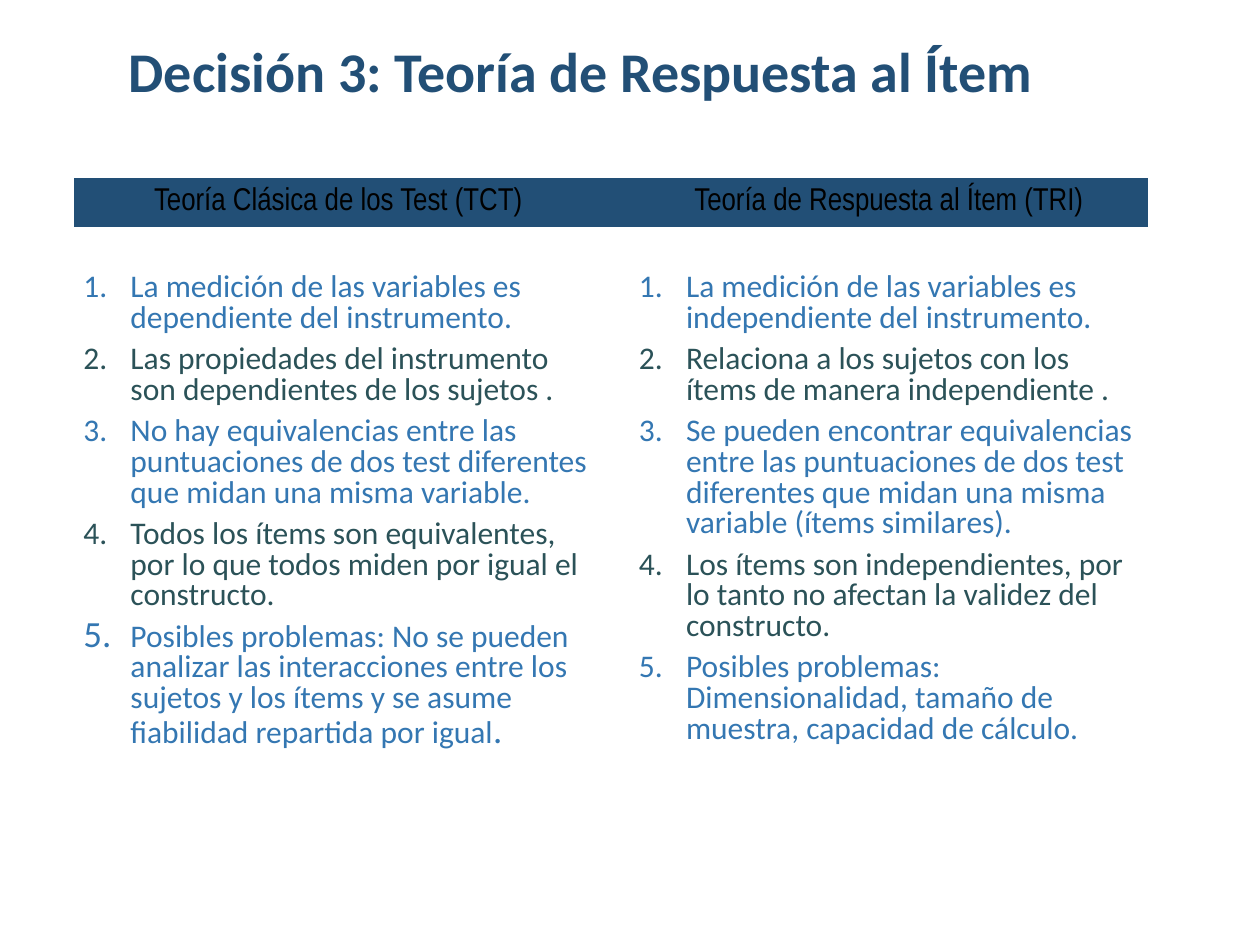
import pptx
import pptx.util
import pptx.dml.color
import pptx.enum.text
import pptx.oxml.ns
import lxml.etree

Cm = pptx.util.Cm
Pt = pptx.util.Pt
qn = pptx.oxml.ns.qn
PP_ALIGN = pptx.enum.text.PP_ALIGN
MSO_ANCHOR = pptx.enum.text.MSO_ANCHOR

COLORS = {"navy": "224F76", "blue": "3477B2", "teal": "2B5258", "black": "000000"}
NO_STYLE = "{2D5ABB26-0587-4C30-8999-92F81FD0307C}"

HEADERS = {0: "Teoría Clásica de los Test (TCT)", 2: "Teoría de Respuesta al Ítem (TRI)"}
ITEMS = {
    0: [
        "La medición de las variables es dependiente del instrumento.",
        "Las propiedades del instrumento son dependientes de los sujetos .",
        "No hay equivalencias entre las puntuaciones de dos test diferentes que midan una misma variable.",
        "Todos los ítems son equivalentes, por lo que todos miden por igual el constructo.",
        "Posibles problemas: No se pueden analizar las interacciones entre los sujetos y los ítems "
        "y se asume fiabilidad repartida por igual",
    ],
    2: [
        "La medición de las variables es independiente del instrumento.",
        "Relaciona a los sujetos con los ítems de manera independiente .",
        "Se pueden encontrar equivalencias entre las puntuaciones de dos test diferentes "
        "que midan una misma variable (ítems similares).",
        "Los ítems son independientes, por lo tanto no afectan la validez del constructo.",
        "Posibles problemas: Dimensionalidad, tamaño de muestra, capacidad de cálculo.",
    ],
}


def add_run(p, text, size, font, color, bold=False):
    r = p.add_run()
    r.text = text
    r.font.size = Pt(size)
    r.font.name = font
    r.font.bold = bold
    r.font.color.rgb = pptx.dml.color.RGBColor.from_string(COLORS[color])


def add_number(p, color, percent):
    pPr = p._p.get_or_add_pPr()
    pPr.set("marL", str(Cm(0.95)))
    pPr.set("indent", str(-Cm(0.95)))
    clr = lxml.etree.SubElement(pPr, qn("a:buClr"))
    lxml.etree.SubElement(clr, qn("a:srgbClr"), val=COLORS[color])
    lxml.etree.SubElement(pPr, qn("a:buSzPct"), val=str(percent * 1000))
    lxml.etree.SubElement(pPr, qn("a:buFont"), typeface="Calibri")
    lxml.etree.SubElement(pPr, qn("a:buAutoNum"), type="arabicPeriod")


prs = pptx.Presentation()
prs.slide_width = Cm(25.4)
prs.slide_height = Cm(19.05)
s = prs.slides.add_slide(prs.slide_layouts[5])

title = s.shapes.title
title.left, title.top, title.width, title.height = Cm(2.34), Cm(0.61), Cm(22.3), Cm(1.63)
tf = title.text_frame
tf.word_wrap = True
tf.auto_size = pptx.enum.text.MSO_AUTO_SIZE.NONE
tf.vertical_anchor = MSO_ANCHOR.TOP
p = tf.paragraphs[0]
p.alignment = PP_ALIGN.LEFT
add_run(p, "Decisión 3: Teoría de Respuesta al Ítem", 32, "Calibri", "navy", True)

frame = s.shapes.add_table(2, 3, Cm(1.5), Cm(3.58), Cm(21.64), Cm(11.28))
table = frame.table
table.first_row = False
table.horz_banding = False
table._tbl.tblPr.find(qn("a:tableStyleId")).text = NO_STYLE
for column, width in zip(table.columns, (10.64, 0.56, 10.44)):
    column.width = Cm(width)
for row, height in zip(table.rows, (0.99, 10.29)):
    row.height = Cm(height)

for cell in table.iter_cells():
    cell.margin_left = cell.margin_right = Cm(0.18)
    cell.margin_top = cell.margin_bottom = Cm(0.1)
    cell.fill.background()

for cell in table.rows[0].cells:
    cell.fill.solid()
    cell.fill.fore_color.rgb = pptx.dml.color.RGBColor.from_string(COLORS["navy"])

for col, header in HEADERS.items():
    cell = table.cell(0, col)
    cell.vertical_anchor = MSO_ANCHOR.MIDDLE
    p = cell.text_frame.paragraphs[0]
    p.alignment = PP_ALIGN.CENTER
    add_run(p, header, 18, "Arial Narrow", "black")

    cell = table.cell(1, col)
    cell.margin_top = Cm(0.93)
    cell.vertical_anchor = MSO_ANCHOR.TOP
    tf = cell.text_frame
    for i, item in enumerate(ITEMS[col]):
        p = tf.add_paragraph() if i else tf.paragraphs[0]
        color = ("blue", "teal")[i % 2]
        large_end = col == 0 and i == 4
        p.line_spacing = 0.8
        if i:
            p.space_before = Pt(6)
        add_number(p, color, 117 if large_end else 100)
        add_run(p, item, 18, "Calibri", color)
        if large_end:
            add_run(p, ".", 21, "Calibri", color)

prs.save("out.pptx")
